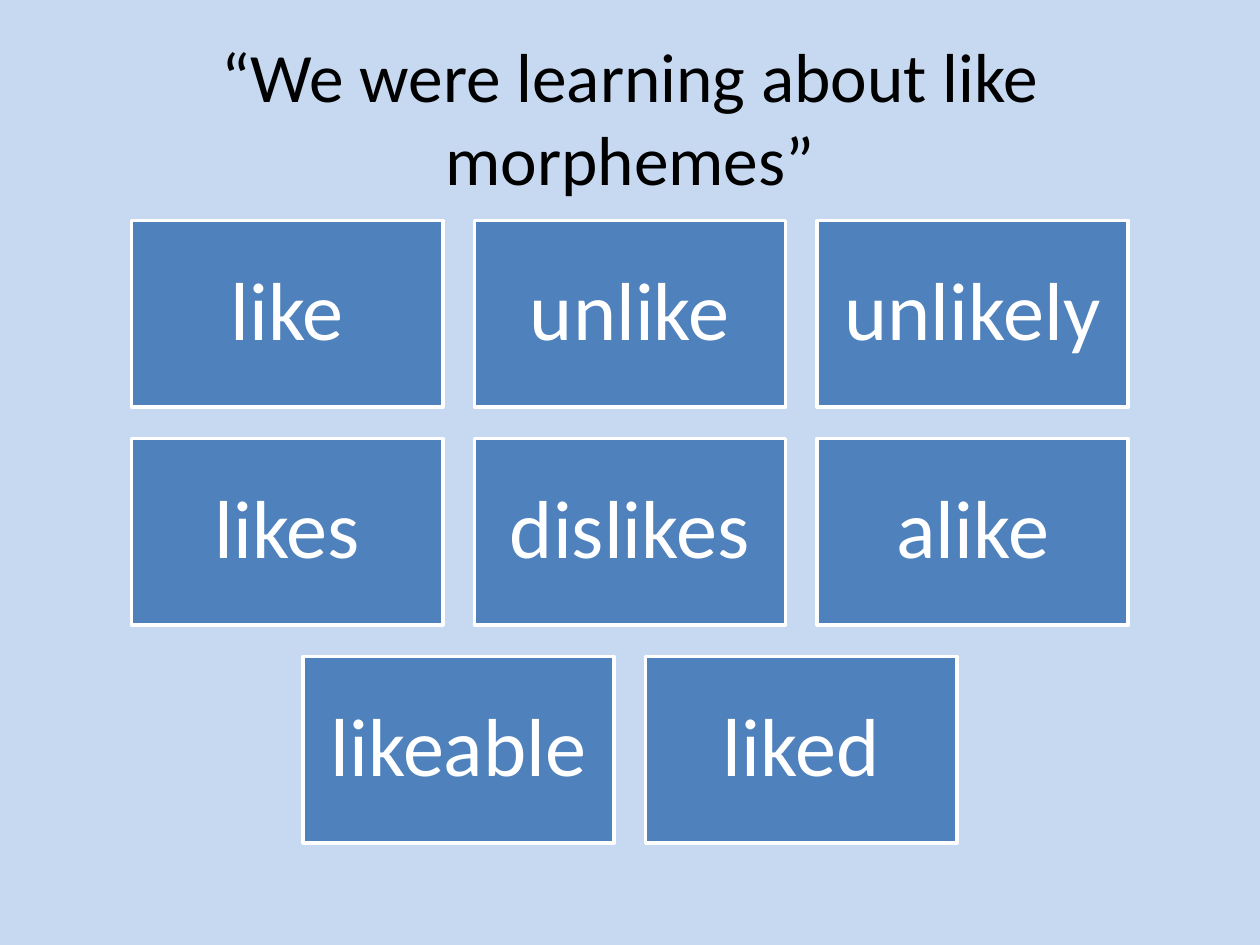
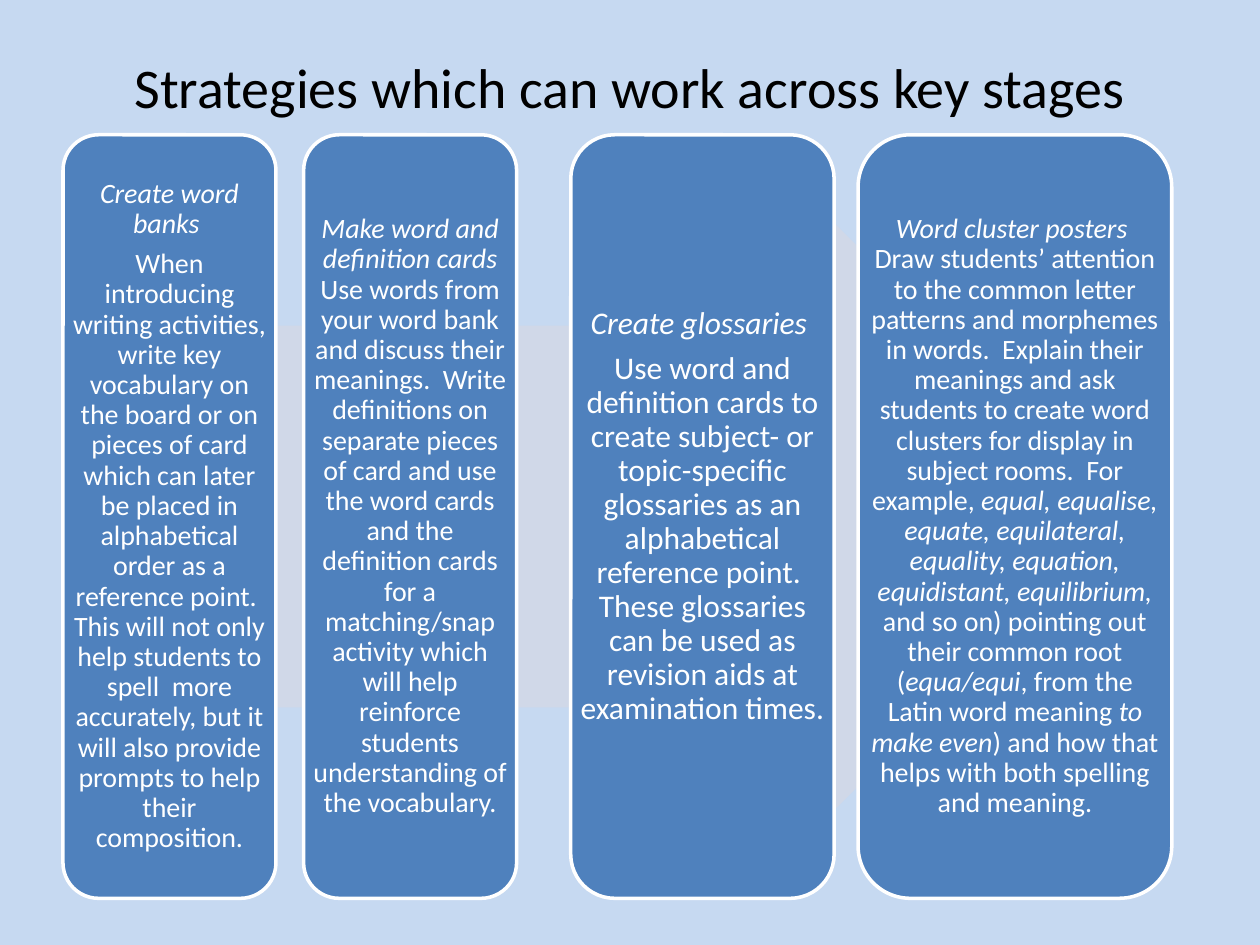
from pptx import Presentation
from pptx import util as u
from pptx.dml.color import RGBColor
from pptx.enum import shapes, text

WIDTH, HEIGHT = 10, 7.5
FONT = "Calibri"
COLOURS = {
    "background": "C6D9F1",
    "box": "4F81BD",
    "arrow": "D0D8E8",
    "light": "FFFFFF",
    "title": "000000",
}

WORD_ROWS = [
    ["like", "unlike", "unlikely"],
    ["likes", "dislikes", "alike"],
    ["likeable", "liked"],
]
TILE_W, TILE_H, TILE_GAP, TILE_TOP = 2.47, 1.48, 0.25, 1.75

CARD_TOP, CARD_H = 1.07, 6.06
STRATEGIES = [
    (0.5, 1.69, 16, [
        "*Create word banks *",
        "When introducing writing activities, write key vocabulary on the board "
        "or on pieces of card which can later be placed in alphabetical order as "
        "a reference point.  This will not only help students to spell  more "
        "accurately, but it will also provide prompts to help their composition.",
    ]),
    (2.41, 1.69, 16, [
        "*Make word and definition cards *Use words from your word bank and "
        "discuss their meanings.  Write definitions on separate pieces of card "
        "and use the word cards and the definition cards for a matching/snap "
        "activity which will help reinforce students understanding of the "
        "vocabulary.",
    ]),
    (4.53, 2.09, 18, [
        "*Create glossaries *",
        "Use word and definition cards to create subject- or topic-specific "
        "glossaries as an alphabetical reference point.  These glossaries can be "
        "used as revision aids at examination times.",
    ]),
    (6.81, 2.49, 16, [
        "*Word cluster posters * Draw students’ attention to the common letter "
        "patterns and morphemes in words.  Explain their meanings and ask "
        "students to create word clusters for display in subject rooms.  For "
        "example, *equal, equalise, equate, equilateral, equality, equation, "
        "equidistant, equilibrium, *and so on) pointing out their common root "
        "(*equa/equi*, from the Latin word meaning *to make even*) and how that "
        "helps with both spelling and meaning.",
    ]),
]


def rgb(name):
    """Return the named colour of the palette."""
    return RGBColor.from_string(COLOURS[name])


def write(sp, paragraphs, size, colour="light", inset=0.1, spacing=0.9, after=0.35):
    """Fill a shape with centred paragraphs, italic between asterisks."""
    tf = sp.text_frame
    tf.word_wrap = True
    tf.auto_size = text.MSO_AUTO_SIZE.NONE
    tf.vertical_anchor = text.MSO_ANCHOR.MIDDLE
    tf.margin_left = tf.margin_right = u.Inches(inset)
    tf.margin_top = tf.margin_bottom = u.Inches(min(inset, inset if after else 0.05))
    for i, content in enumerate(paragraphs):
        p = tf.paragraphs[0] if i == 0 else tf.add_paragraph()
        p.alignment = text.PP_ALIGN.CENTER
        p.line_spacing = spacing
        p.space_after = u.Pt(round(size * after, 1))
        for k, part in enumerate(content.split("*")):
            if part:
                r = p.add_run()
                r.text = part
                r.font.name, r.font.size = FONT, u.Pt(size)
                r.font.italic = k % 2 == 1
                r.font.color.rgb = rgb(colour)


def add_box(s, kind, box, fill="box", outlined=True):
    """Add a flat preset shape, with a white outline if wanted."""
    sp = s.shapes.add_shape(kind, *map(u.Inches, box))
    sp.shadow.inherit = False
    sp.fill.solid()
    sp.fill.fore_color.rgb = rgb(fill)
    if outlined:
        sp.line.color.rgb = rgb("light")
        sp.line.width = u.Pt(2)
    else:
        sp.line.fill.background()
    return sp


def add_titled_slide(prs, title, size, height):
    """Add a title-only slide and place its title."""
    s = prs.slides.add_slide(prs.slide_layouts[5])
    sp = s.shapes.title
    sp.left, sp.top = u.Inches(0.05 * WIDTH), u.Inches(0.04 * HEIGHT)
    sp.width, sp.height = u.Inches(0.9 * WIDTH), u.Inches(height)
    write(sp, [title], size, colour="title", spacing=1.0, after=0)
    return s


def add_word_grid(s, rows):
    """Add rows of word tiles, each row centred on the slide."""
    for i, words in enumerate(rows):
        row_width = len(words) * (TILE_W + TILE_GAP) - TILE_GAP
        left = (WIDTH - row_width) / 2
        top = TILE_TOP + i * (TILE_H + TILE_GAP)
        for j, word in enumerate(words):
            box = (left + j * (TILE_W + TILE_GAP), top, TILE_W, TILE_H)
            tile = add_box(s, shapes.MSO_SHAPE.RECTANGLE, box)
            write(tile, [word], 47, inset=0.2)


def add_strategy_card(s, left, width, size, paragraphs):
    """Add a rounded card with its text laid over the full width."""
    box = (left, CARD_TOP, width, CARD_H)
    add_box(s, shapes.MSO_SHAPE.ROUNDED_RECTANGLE, box)
    write(s.shapes.add_textbox(*map(u.Inches, box)), paragraphs, size, inset=0.07)


def main():
    """Build both slides and save them."""
    prs = Presentation()
    prs.slide_width, prs.slide_height = u.Inches(WIDTH), u.Inches(HEIGHT)
    background = prs.slide_master.background.fill
    background.solid()
    background.fore_color.rgb = rgb("background")

    s = add_titled_slide(prs, "“We were learning about like morphemes”", 39.6, 1.25)
    add_word_grid(s, WORD_ROWS)

    s = add_titled_slide(prs, "Strategies which can work across key stages", 32, 0.77)
    add_box(s, shapes.MSO_SHAPE.RIGHT_ARROW, (1.3, CARD_TOP, 7.65, CARD_H),
            fill="arrow", outlined=False)
    for strategy in STRATEGIES:
        add_strategy_card(s, *strategy)

    prs.save("out.pptx")


if __name__ == "__main__":
    main()
